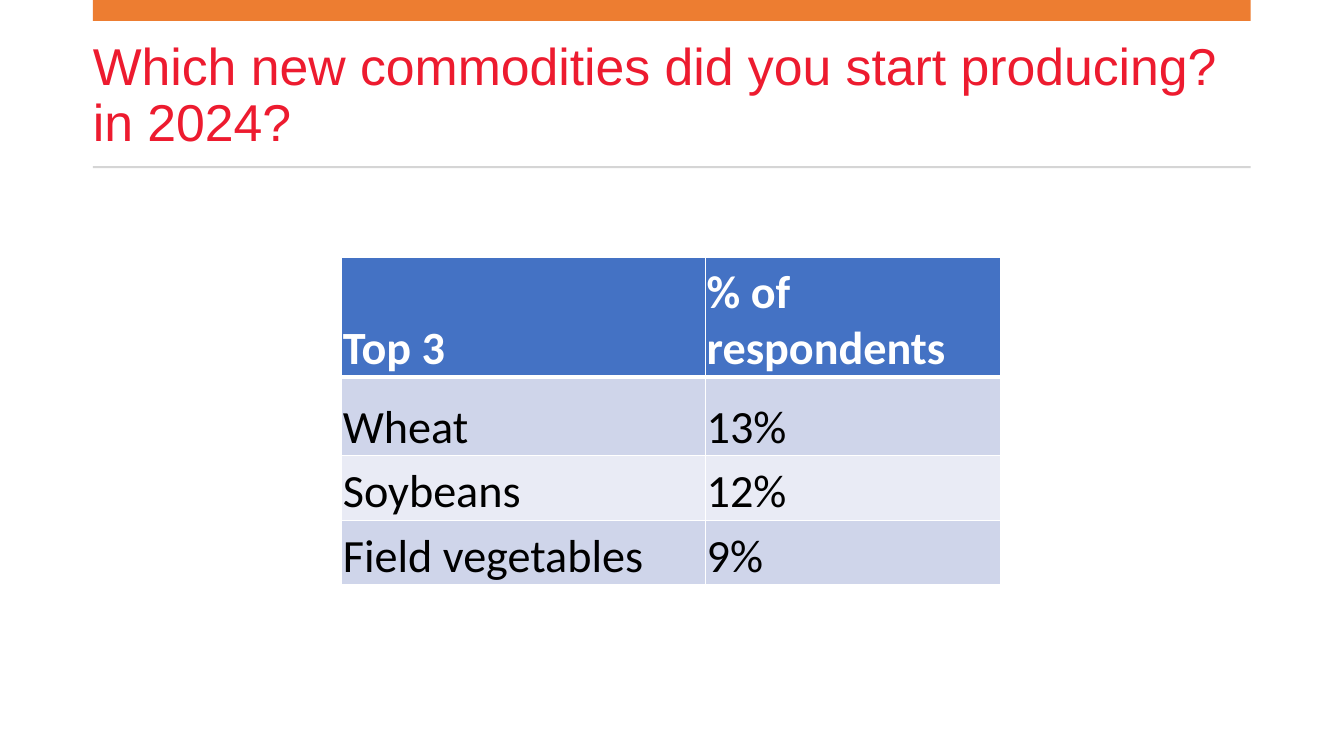
from lxml.etree import SubElement
from pptx import Presentation
from pptx.dml.color import RGBColor
from pptx.enum.shapes import MSO_SHAPE as Shape
from pptx.enum.text import MSO_ANCHOR as Anchor
from pptx.oxml.ns import qn
from pptx.util import Cm, Pt

MARGIN = 2.34
CONTENT_WIDTH = 29.18
ROWS = [
    ("Top 3", "% of respondents"),
    ("Wheat", "13%"),
    ("Soybeans", "12%"),
    ("Field vegetables", "9%"),
]


def color(value):
    return RGBColor.from_string(value)


def write(frame, text, font="Calibri", size=33, ink="000000", bold=False, spacing=None):
    paragraph = frame.paragraphs[0]
    paragraph.line_spacing = spacing
    run = paragraph.add_run()
    run.text = text
    run.font.name = font
    run.font.size = Pt(size)
    run.font.bold = bold
    run.font.color.rgb = color(ink)


def add_border(cell, side, width):
    properties = cell._tc.get_or_add_tcPr()
    line = SubElement(properties, qn(f"a:ln{side}"), w=str(Pt(width)))
    fill = SubElement(line, qn("a:solidFill"))
    SubElement(fill, qn("a:srgbClr"), val=SlideBuilder.white)


class SlideBuilder:
    white = "FFFFFF"
    red = "ED1B2F"
    orange = "ED7D31"
    gray = "D5D5D5"
    header = "4472C4"
    bands = ("E9EBF5", "CFD5EA")

    def __init__(self, presentation):
        self.slide = presentation.slides.add_slide(presentation.slide_layouts[6])

    def bar(self, top, height, fill):
        shape = self.slide.shapes.add_shape(
            Shape.RECTANGLE, Cm(MARGIN), Cm(top), Cm(CONTENT_WIDTH), Cm(height)
        )
        shape.shadow.inherit = False
        shape.fill.solid()
        shape.fill.fore_color.rgb = color(fill)
        shape.line.fill.background()

    def title(self, text, top, height):
        box = self.slide.shapes.add_textbox(
            Cm(MARGIN), Cm(top), Cm(CONTENT_WIDTH), Cm(height)
        )
        frame = box.text_frame
        frame.word_wrap = True
        frame.vertical_anchor = Anchor.MIDDLE
        frame.margin_left = frame.margin_right = 0
        frame.margin_top = frame.margin_bottom = 0
        write(frame, text, font="Arial", size=37, ink=self.red, spacing=0.9)

    def table(self, rows, left, top, widths, heights):
        table = self.slide.shapes.add_table(
            len(rows), len(widths), Cm(left), Cm(top),
            Cm(sum(widths)), Cm(sum(heights)),
        ).table
        for column, width in zip(table.columns, widths):
            column.width = Cm(width)
        for index, (values, height) in enumerate(zip(rows, heights)):
            table.rows[index].height = Cm(height)
            for cell, text in zip(table.rows[index].cells, values):
                self.cell(cell, text, index)

    def cell(self, cell, text, row):
        is_header = row == 0
        cell.vertical_anchor = Anchor.BOTTOM
        cell.margin_left = cell.margin_right = cell.margin_top = Cm(0.03)
        cell.margin_bottom = 0
        widths = {"L": 1, "R": 1, "T": 3 if row == 1 else 1, "B": 3 if is_header else 1}
        for side, width in widths.items():
            add_border(cell, side, width)
        cell.fill.solid()
        cell.fill.fore_color.rgb = color(self.header if is_header else self.bands[row % 2])
        ink = self.white if is_header else "000000"
        write(cell.text_frame, text, ink=ink, bold=is_header)


def main():
    presentation = Presentation()
    presentation.slide_width = Cm(33.87)
    presentation.slide_height = Cm(19.05)
    builder = SlideBuilder(presentation)
    builder.title("Which new commodities did you start producing? in 2024?", 0.94, 3)
    builder.bar(0, 0.53, builder.orange)
    builder.bar(4.19, 0.05, builder.gray)
    builder.table(ROWS, 8.61, 6.48, (9.17, 7.44), (3.02, 1.98, 1.63, 1.63))
    presentation.save("out.pptx")


if __name__ == "__main__":
    main()
